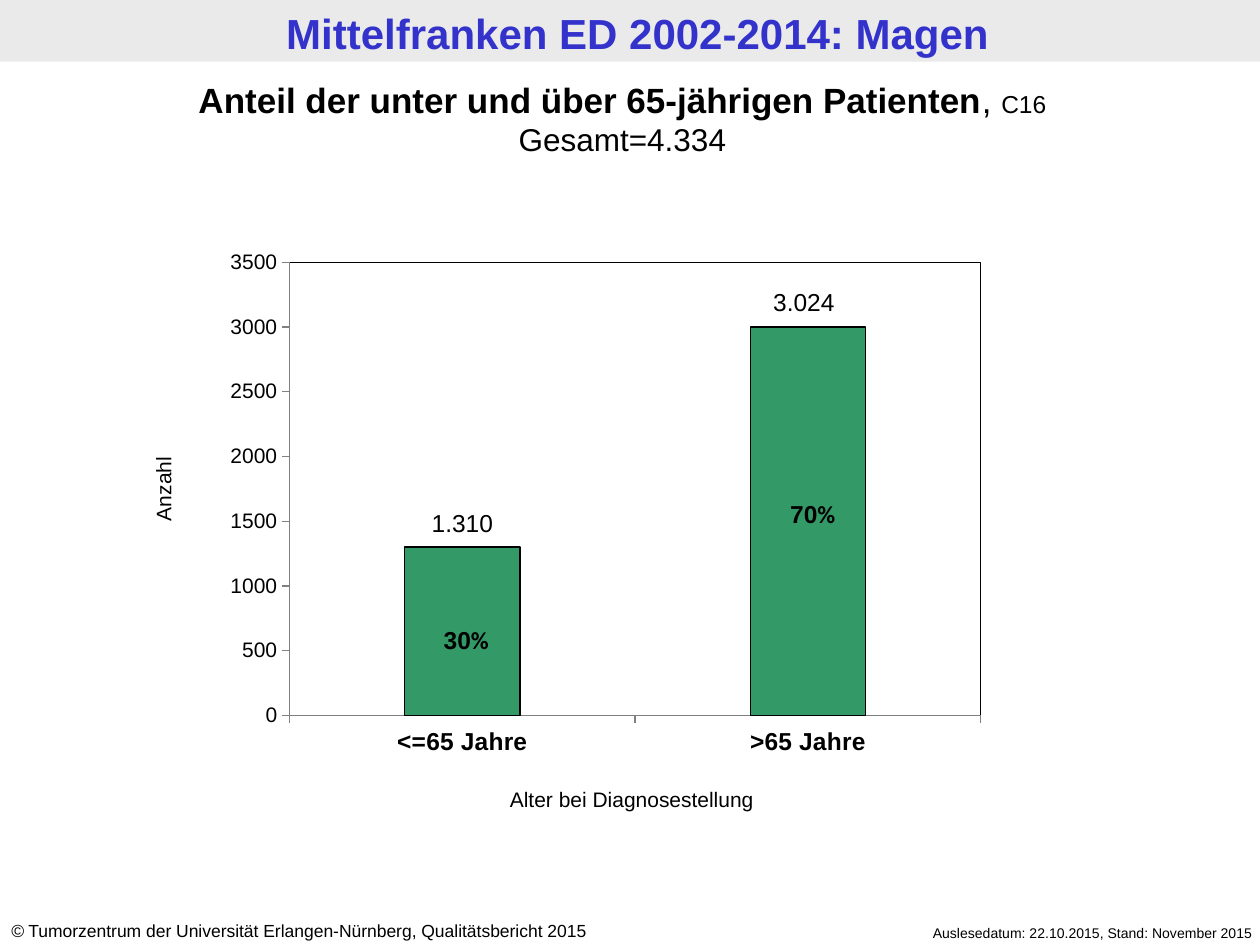
"""Build the slide on the share of stomach cancer patients under and over 65."""
import lxml.etree
import pptx
import pptx.chart.data
import pptx.dml.color
import pptx.enum.chart
import pptx.enum.shapes
import pptx.enum.text
import pptx.oxml
import pptx.oxml.ns
import pptx.util

Inches = pptx.util.Inches
Pt = pptx.util.Pt
ALIGN = pptx.enum.text.PP_ALIGN
TICK = pptx.enum.chart.XL_TICK_MARK
COLORS = {"band": "EAEAEA", "title": "3333CC", "text": "000000", "bar": "339966", "axis": "808080"}


def rgb(name):
    return pptx.dml.color.RGBColor.from_string(COLORS[name])


def add_text(slide, box, paragraphs, align=ALIGN.CENTER, color="text"):
    label = slide.shapes.add_textbox(*map(Inches, box))
    frame = label.text_frame
    frame.word_wrap = True
    frame.auto_size = pptx.enum.text.MSO_AUTO_SIZE.SHAPE_TO_FIT_TEXT
    for index, runs in enumerate(paragraphs):
        paragraph = frame.add_paragraph() if index else frame.paragraphs[0]
        paragraph.alignment = align
        for text, size, style, font in runs:
            run = paragraph.add_run()
            run.text = text
            run.font.size = Pt(size)
            run.font.name = font
            run.font.bold = style == "bold"
            run.font.italic = style == "italic"
            run.font.color.rgb = rgb(color)
    return label


deck = pptx.Presentation()
deck.slide_width, deck.slide_height = Inches(10), Inches(7.5)
slide = deck.slides.add_slide(deck.slide_layouts[6])

band = slide.shapes.add_shape(
    pptx.enum.shapes.MSO_SHAPE.RECTANGLE, 0, 0, Inches(10), Inches(0.49))
band.shadow.inherit = False
band.fill.solid()
band.fill.fore_color.rgb = rgb("band")
band.line.fill.background()

title = add_text(slide, (0.06, 0.02, 10, 0.49),
                 [[("Mittelfranken ED 2002-2014: Magen", 24, "bold", "Arial")]], color="title")
title.text_frame.margin_left = title.text_frame.margin_right = Inches(0.09)
title.text_frame.margin_top = title.text_frame.margin_bottom = Inches(0.04)
add_text(slide, (6.65, 7.29, 3.39, 0.24),
         [[("Auslesedatum: 22.10.2015, Stand: November 2015", 8, "", "Arial")]], ALIGN.RIGHT)
add_text(slide, (-0.01, 7.25, 5.24, 0.27),
         [[("©", 10, "italic", "Arial"),
           (" Tumorzentrum der Universität Erlangen-Nürnberg, Qualitätsbericht 2015", 10, "", "Arial")]],
         ALIGN.LEFT)

patients = pptx.chart.data.CategoryChartData()
patients.categories = ["<=65 Jahre", ">65 Jahre"]
patients.add_series("Anzahl", (1300, 3000))
chart = slide.shapes.add_chart(
    pptx.enum.chart.XL_CHART_TYPE.COLUMN_STACKED,
    Inches(1.51), Inches(1.42), Inches(6.98), Inches(4.66), patients).chart
chart.has_legend = False
chart.has_title = False
chart.font.name = "Calibri"
chart.font.size = Pt(18)
chart.font.color.rgb = rgb("text")

plot = chart.plots[0]
plot.gap_width = 200
plot.overlap = 100
plot.vary_by_categories = False
bars = plot.series[0].format
bars.fill.solid()
bars.fill.fore_color.rgb = rgb("bar")
bars.line.color.rgb = rgb("text")
bars.line.width = Pt(0.75)

for axis, size, bold in ((chart.category_axis, 14, True), (chart.value_axis, 12, False)):
    axis.has_major_gridlines = False
    axis.major_tick_mark = TICK.OUTSIDE
    axis.minor_tick_mark = TICK.NONE
    axis.format.line.color.rgb = rgb("axis")
    axis.format.line.width = Pt(0.75)
    axis.tick_labels.font.name = "Arial"
    axis.tick_labels.font.size = Pt(size)
    axis.tick_labels.font.bold = bold
    axis.tick_labels.font.color.rgb = rgb("text")
chart.value_axis.minimum_scale = 0
chart.value_axis.maximum_scale = 3500
chart.value_axis.major_unit = 500

qn = pptx.oxml.ns.qn
plot_area = chart._chartSpace.find(".//" + qn("c:plotArea"))
for old_layout in plot_area.findall(qn("c:layout")):
    plot_area.remove(old_layout)
layout = lxml.etree.Element(qn("c:layout"))
manual = lxml.etree.SubElement(layout, qn("c:manualLayout"))
for tag, value in (("layoutTarget", "inner"), ("xMode", "edge"), ("yMode", "edge"),
                   ("x", "0.113"), ("y", "0.142"), ("w", "0.786"), ("h", "0.772")):
    lxml.etree.SubElement(manual, qn("c:" + tag)).set("val", value)
plot_area.insert(0, layout)
plot_area.append(pptx.oxml.parse_xml(
    f'<c:spPr {pptx.oxml.ns.nsdecls("c", "a")}><a:noFill/><a:ln w="9525"><a:solidFill>'
    f'<a:srgbClr val="{COLORS["text"]}"/></a:solidFill></a:ln></c:spPr>'))

add_text(slide, (0, 0.57, 9.88, 0.74),
         [[("Anteil der unter und über 65-jährigen Patienten", 20, "bold", "Arial"),
           (", ", 20, "", "Arial"), ("C16", 14, "", "Arial")],
          [("Gesamt=4.334", 18, "", "Arial")]])
for left, top, share in ((3.19, 4.91, "30"), (5.94, 3.91, "70")):
    add_text(slide, (left, top, 1.02, 0.34),
             [[(share, 14, "bold", "Arial"), ("%", 14, "bold", "Calibri")]])
for left, top, count in ((3.16, 3.98, "1.310"), (5.87, 2.23, "3.024")):
    add_text(slide, (left, top, 1.02, 0.34), [[(count, 14, "", "Arial")]])
add_text(slide, (3.35, 6.19, 3.33, 0.3), [[("Alter bei Diagnosestellung", 12, "", "Arial")]])
count_title = add_text(slide, (-0.01, 3.73, 2.61, 0.3), [[("Anzahl", 12, "", "Arial")]])
count_title.rotation = 270

deck.save("out.pptx")
